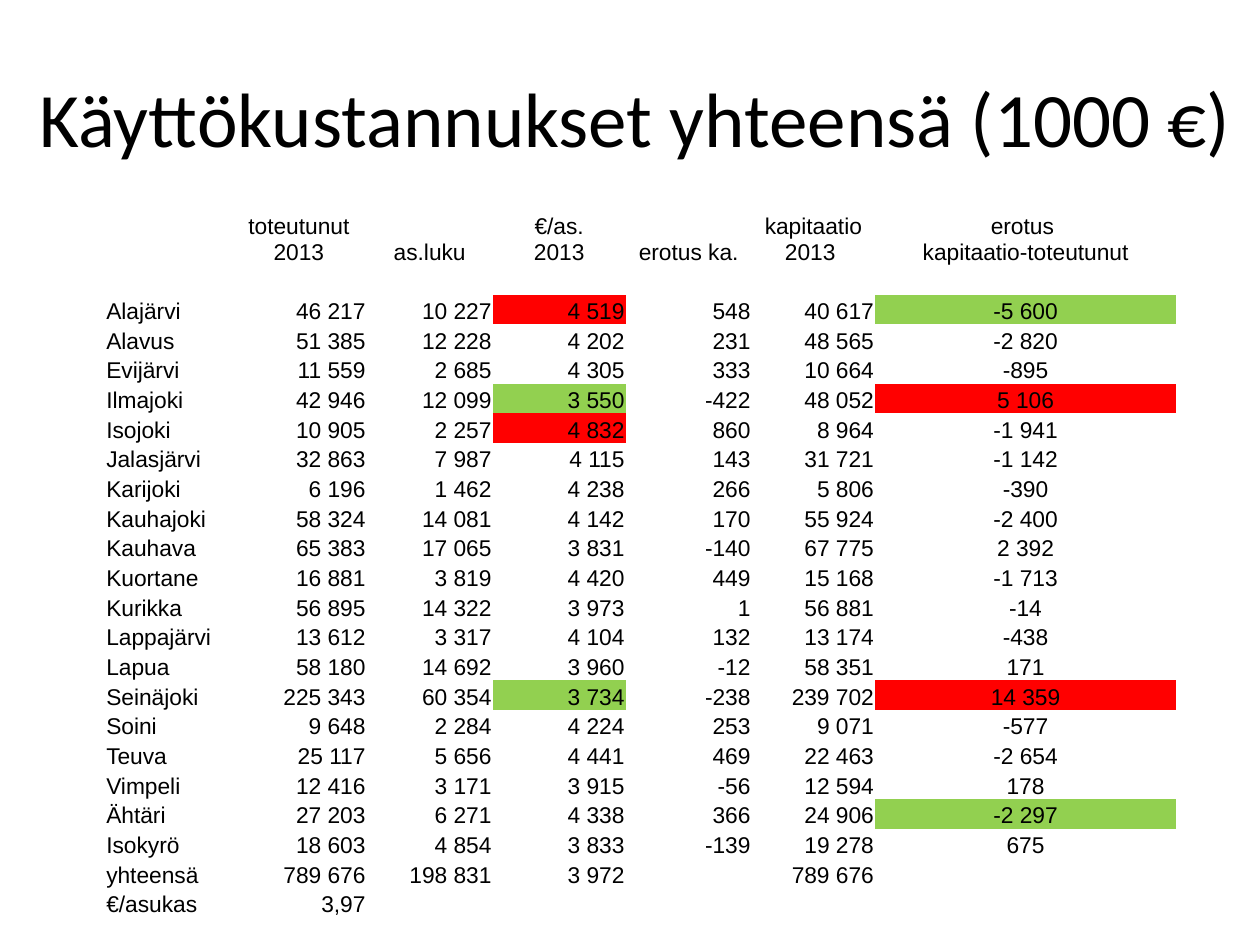
from lxml import etree
from pptx import Presentation
from pptx.dml.color import RGBColor
from pptx.enum.text import MSO_ANCHOR, PP_ALIGN
from pptx.oxml.ns import qn
from pptx.util import Pt

LEFT, CENTER, RIGHT = PP_ALIGN.LEFT, PP_ALIGN.CENTER, PP_ALIGN.RIGHT
MIDDLE, BOTTOM = MSO_ANCHOR.MIDDLE, MSO_ANCHOR.BOTTOM
BLACK, RED, GREEN = "000000", "FF0000", "92D050"
NO_STYLE = "{2D5ABB26-0587-4C30-8999-92F81FD0307C}"
SIZE = 13


def color(text):
    return RGBColor.from_string(text)


def style(para, name, size, align):
    para.alignment = align
    for run in para.runs:
        run.font.name = name
        run.font.size = Pt(size)
        run.font.color.rgb = color(BLACK)


HEADS = ["", "toteutunut\n2013", "as.luku", "€/as.\n2013", "erotus ka.",
         "kapitaatio\n2013 ", "erotus \nkapitaatio-toteutunut"]
DATA = [
    "Alajärvi|46 217|10 227|4 519|548|40 617|-5 600",
    "Alavus|51 385|12 228|4 202|231|48 565|-2 820",
    "Evijärvi|11 559|2 685|4 305|333|10 664|-895",
    "Ilmajoki|42 946|12 099|3 550|-422|48 052|5 106",
    "Isojoki|10 905|2 257|4 832|860|8 964|-1 941",
    "Jalasjärvi|32 863|7 987|4 115|143|31 721|-1 142",
    "Karijoki|6 196|1 462|4 238|266|5 806|-390",
    "Kauhajoki|58 324|14 081|4 142|170|55 924|-2 400",
    "Kauhava|65 383|17 065|3 831|-140|67 775|2 392",
    "Kuortane|16 881|3 819|4 420|449|15 168|-1 713",
    "Kurikka|56 895|14 322|3 973|1|56 881|-14",
    "Lappajärvi|13 612|3 317|4 104|132|13 174|-438",
    "Lapua|58 180|14 692|3 960|-12|58 351|171",
    "Seinäjoki|225 343|60 354|3 734|-238|239 702|14 359",
    "Soini|9 648|2 284|4 224|253|9 071|-577",
    "Teuva|25 117|5 656|4 441|469|22 463|-2 654",
    "Vimpeli|12 416|3 171|3 915|-56|12 594|178",
    "Ähtäri|27 203|6 271|4 338|366|24 906|-2 297",
    "Isokyrö|18 603|4 854|3 833|-139|19 278|675",
    "yhteensä|789 676|198 831|3 972||789 676|",
    "€/asukas|3,97|||||",
]
WIDTHS = [72, 77.5, 72, 76, 72, 70.5, 172]
ALIGNS = [LEFT] + [RIGHT] * 5 + [CENTER]
HEAD_H, ROW_H = 46.5, 16.97
# Highlighted cells by town and column
MARKS = {
    ("Alajärvi", 3): RED, ("Alajärvi", 6): GREEN,
    ("Ilmajoki", 3): GREEN, ("Ilmajoki", 6): RED,
    ("Isojoki", 3): RED,
    ("Seinäjoki", 3): GREEN, ("Seinäjoki", 6): RED,
    ("Ähtäri", 6): GREEN,
}

prs = Presentation()
prs.slide_width, prs.slide_height = Pt(720), Pt(540)
slide = prs.slides.add_slide(prs.slide_layouts[6])

# Title
box = slide.shapes.add_textbox(Pt(14.4), Pt(21.6), Pt(697.5), Pt(90))
frame = box.text_frame
frame.word_wrap = True
frame.vertical_anchor = MIDDLE
frame.text = "Käyttökustannukset yhteensä (1000 €)"
style(frame.paragraphs[0], "Calibri", 44, CENTER)

# Table: header, an empty row, then the towns and totals
rows = [HEADS, [""] * len(HEADS)]
rows += [line.split("|") for line in DATA]
height = HEAD_H + ROW_H * (len(rows) - 1)
table = slide.shapes.add_table(len(rows), len(WIDTHS), Pt(60), Pt(105),
                               Pt(sum(WIDTHS)), Pt(height)).table
table.first_row = table.horz_banding = False
table._tbl.tblPr.find(qn("a:tableStyleId")).text = NO_STYLE
for col, width in zip(table.columns, WIDTHS):
    col.width = Pt(width)

for r, row in enumerate(rows):
    table.rows[r].height = Pt(ROW_H if r else HEAD_H)
    for c, text in enumerate(row):
        cell = table.cell(r, c)
        cell.margin_left = cell.margin_right = cell.margin_top = Pt(0.75)
        cell.margin_bottom = Pt(0)
        cell.vertical_anchor = BOTTOM
        mark = MARKS.get((row[0], c))
        if mark:
            cell.fill.solid()
            cell.fill.fore_color.rgb = color(mark)
        else:
            cell.fill.background()
        para = cell.text_frame.paragraphs[0]
        para.text = text
        style(para, "Arial", SIZE, ALIGNS[c] if r else CENTER)
        # Line breaks and empty cells keep the table's text size
        for gap in para._p.findall(qn("a:br")):
            etree.SubElement(gap, qn("a:rPr"), sz=str(SIZE * 100))
        if not text:
            etree.SubElement(para._p, qn("a:endParaRPr"), sz=str(SIZE * 100))

prs.save("out.pptx")
